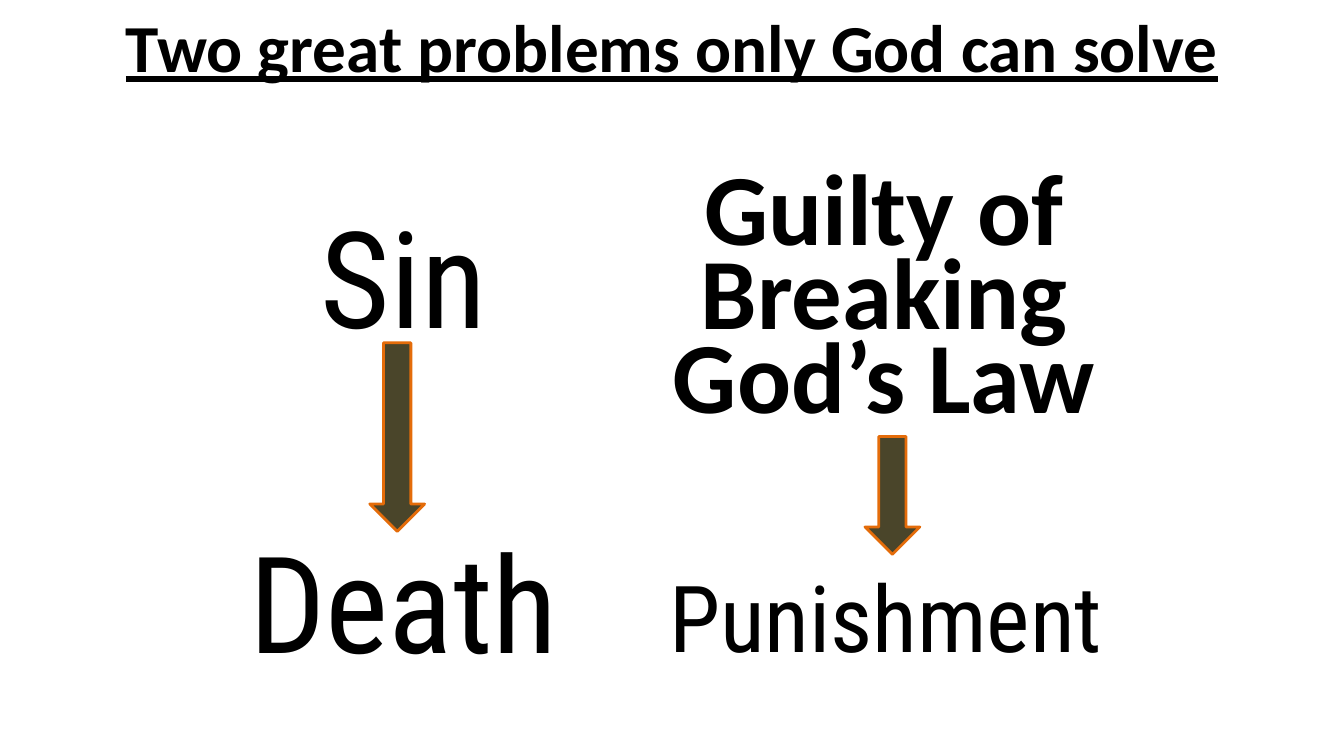
from typing import NamedTuple

from pptx import Presentation
from pptx.dml.color import RGBColor
from pptx.enum.shapes import MSO_SHAPE
from pptx.enum.text import MSO_ANCHOR, PP_ALIGN
from pptx.slide import Slide
from pptx.util import Cm, Pt

ARROW = MSO_SHAPE.DOWN_ARROW
TOP, MIDDLE = MSO_ANCHOR.TOP, MSO_ANCHOR.MIDDLE
CENTER = PP_ALIGN.CENTER

BLACK = RGBColor(0x00, 0x00, 0x00)
WHITE = RGBColor(0xFF, 0xFF, 0xFF)
OLIVE = RGBColor(0x4A, 0x45, 0x2A)
ORANGE = RGBColor(0xE4, 0x6C, 0x0A)

PLAIN, STRONG = "Roboto Condensed", "Calibri"


class Box(NamedTuple):
    """Place of an element, in centimetres."""
    left: float
    top: float
    width: float
    height: float

    def lengths(self) -> list[Cm]:
        return [Cm(side) for side in self]


class Label(NamedTuple):
    box: Box
    lines: list[str]
    size: int
    font: str
    anchor: MSO_ANCHOR = TOP
    bold: bool = False
    under: bool = False
    pitch: int | None = None  # line spacing in points
    gap: int = 0  # points between paragraphs


LABELS = [
    Label(Box(5.51, 4.24, 9.32, 13.55), ["Sin", "Death"], 96, PLAIN,
          MIDDLE, gap=117),
    Label(Box(16.31, 2.97, 11.94, 9.58),
          ["Guilty of", "Breaking", "God’s Law"], 72, STRONG,
          MIDDLE, bold=True, pitch=60),
    Label(Box(0.64, 0, 32.6, 2.31),
          ["Two great problems only God can solve"], 48, STRONG,
          bold=True, under=True),
    Label(Box(15.24, 14, 14.17, 3.07), ["Punishment"], 66, PLAIN),
]

ARROWS = [Box(9.32, 8.64, 1.38, 4.75), Box(21.8, 11, 1.38, 2.97)]


def add_label(slide: Slide, label: Label) -> None:
    frame = slide.shapes.add_textbox(*label.box.lengths()).text_frame
    frame.word_wrap = True
    frame.vertical_anchor = label.anchor
    frame.text = "\n".join(label.lines)
    for row, para in enumerate(frame.paragraphs):
        para.alignment = CENTER
        para.line_spacing = Pt(label.pitch) if label.pitch else None
        para.space_before = Pt(label.gap if row else 0)
        font = para.font
        font.name, font.size = label.font, Pt(label.size)
        font.bold, font.underline = label.bold, label.under
        font.color.rgb = BLACK


def add_arrow(slide: Slide, box: Box) -> None:
    arrow = slide.shapes.add_shape(ARROW, *box.lengths())
    arrow.shadow.inherit = False
    arrow.fill.solid()
    arrow.fill.fore_color.rgb = OLIVE
    arrow.line.color.rgb = ORANGE
    arrow.line.width = Pt(2)


def main() -> None:
    deck = Presentation()
    deck.slide_width, deck.slide_height = Cm(33.87), Cm(19.05)
    slide = deck.slides.add_slide(deck.slide_layouts[6])
    slide.background.fill.solid()
    slide.background.fill.fore_color.rgb = WHITE
    for label in LABELS:
        add_label(slide, label)
    for box in ARROWS:
        add_arrow(slide, box)
    deck.save("out.pptx")


if __name__ == "__main__":
    main()
